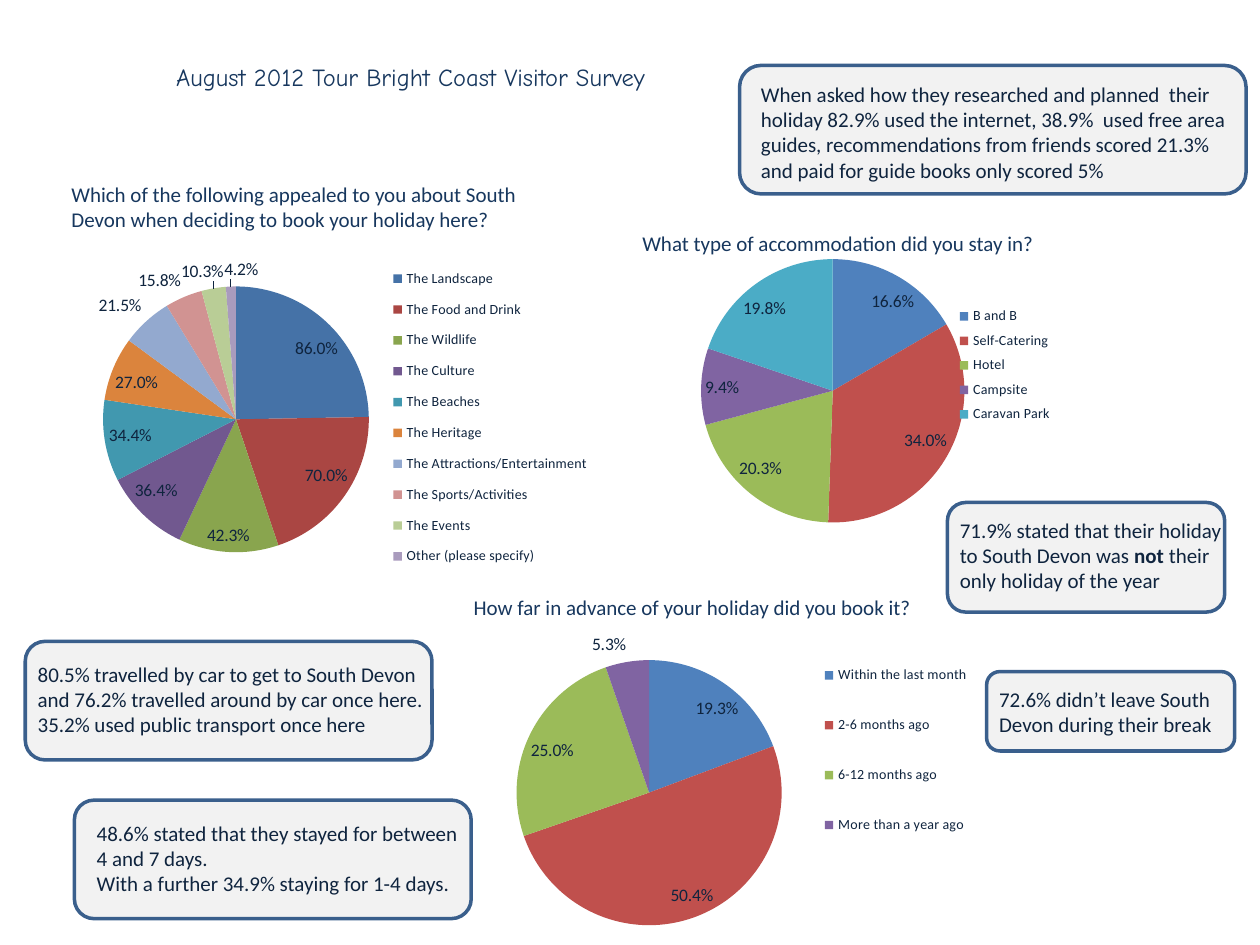
from lxml import etree
from pptx import Presentation
from pptx import util as u
from pptx.chart.data import CategoryChartData
from pptx.dml.color import RGBColor
from pptx.enum import chart as ch, shapes, text
from pptx.oxml.ns import qn

NAVY = RGBColor(0x17, 0x37, 0x5E)
INK = RGBColor(0x0F, 0x24, 0x3E)
PANEL = RGBColor(0xF2, 0xF2, 0xF2)
BORDER = RGBColor(0x3A, 0x5F, 0x8C)
BRIGHT = [RGBColor.from_string(c) for c in
          ("4F81BD", "C0504D", "9BBB59", "8064A2", "4BACC6")]
MUTED = [RGBColor.from_string(c) for c in
         ("4572A7", "AA4643", "89A54E", "71588F", "4198AF",
          "DB843D", "93A9CF", "D19392", "B9CD96", "A99BBD")]

APPEAL = {"The Landscape": 0.86, "The Food and Drink": 0.7, "The Wildlife": 0.423,
          "The Culture": 0.364, "The Beaches": 0.344, "The Heritage": 0.27,
          "The Attractions/Entertainment": 0.215, "The Sports/Activities": 0.158,
          "The Events": 0.103, "Other (please specify)": 0.042}
ADVANCE = {"Within the last month": 0.193, "2-6 months ago": 0.504,
           "6-12 months ago": 0.25, "More than a year ago": 0.053}
LODGING = {"B and B": 0.166, "Self-Catering": 0.34, "Hotel": 0.203,
           "Campsite": 0.094, "Caravan Park": 0.198}

CALLOUTS = [
    ((14.91, 1.32, 10.21, 2.59), (15.09, 1.52, 10.49, 2.31),
     ["When asked how they researched and planned  their holiday 82.9% used the "
      "internet, 38.9%  used free area guides, recommendations from friends "
      "scored 21.3%",
      "and paid for guide books only scored 5%"]),
    ((19.89, 13.54, 5, 1.6), (19.89, 13.72, 5.21, 1.8),
     ["72.6% didn’t leave South Devon during their break"]),
    ((19.1, 10.13, 5.59, 2.21), (19.1, 10.31, 5.79, 1.8),
     ["71.9% stated that their holiday to South Devon was **not** their only "
      "holiday of the year"]),
    ((1.5, 16.13, 8, 2.39), (1.7, 16.41, 8, 1.5),
     ["48.6% stated that they stayed for between 4 and 7 days.",
      "With a further 34.9% staying for 1-4 days."]),
    ((0.51, 12.93, 8.2, 2.39), (0.51, 13.21, 8.41, 1.5),
     ["80.5% travelled by car to get to South Devon and 76.2% travelled around "
      "by car once here.",
      "35.2% used public transport once here"]),
]


def cm(box):
    return [u.Cm(v) for v in box]


def add_text(s, box, *paras, size=12, font="Calibri", color=INK, wrap=True):
    tf = s.shapes.add_textbox(*cm(box)).text_frame
    tf.word_wrap = wrap
    tf.vertical_anchor = text.MSO_ANCHOR.TOP
    for i, para in enumerate(paras):
        p = tf.paragraphs[0] if i == 0 else tf.add_paragraph()
        for j, part in enumerate(para.split("**")):
            r = p.add_run()
            r.text = part
            r.font.size = u.Pt(size)
            r.font.name = font
            r.font.color.rgb = color
            r.font.bold = j % 2 == 1


def add_panel(s, box):
    sp = s.shapes.add_shape(shapes.MSO_SHAPE.FLOWCHART_ALTERNATE_PROCESS, *cm(box))
    sp.shadow.inherit = False
    sp.fill.solid()
    sp.fill.fore_color.rgb = PANEL
    sp.line.color.rgb = BORDER
    sp.line.width = u.Pt(2)


def set_layout(parent, before, box, inner=False):
    for old in parent.findall(qn("c:layout")):
        parent.remove(old)
    layout = etree.Element(qn("c:layout"))
    manual = etree.SubElement(layout, qn("c:manualLayout"))
    items = [("layoutTarget", "inner")] if inner else []
    items += [("xMode", "edge"), ("yMode", "edge"), *zip("xywh", box)]
    for tag, val in items:
        etree.SubElement(manual, qn("c:" + tag)).set("val", str(val))
    before.addprevious(layout)


def set_font(font, size, color):
    font.size = u.Pt(size)
    font.name = "Calibri"
    font.color.rgb = color


def add_pie(s, box, values, colors, plot_box, legend_box):
    data = CategoryChartData(number_format="0.0%")
    data.categories = list(values)
    data.add_series("Series 1", list(values.values()))
    chart = s.shapes.add_chart(ch.XL_CHART_TYPE.PIE, *cm(box), data).chart
    chart.has_title = False
    set_font(chart.font, 10, INK)
    chart.has_legend = True
    legend = chart.legend
    legend.position = ch.XL_LEGEND_POSITION.RIGHT
    legend.include_in_layout = False
    set_font(legend.font, 8, INK)

    plot = chart.plots[0]
    plot.vary_by_categories = True
    for i, color in zip(range(len(values)), colors):
        fill = plot.series[0].points[i].format.fill
        fill.solid()
        fill.fore_color.rgb = color
    plot.has_data_labels = True
    labels = plot.data_labels
    labels.show_value = True
    labels.show_percentage = False
    labels.number_format = "0.0%"
    labels.number_format_is_linked = False
    labels.position = ch.XL_LABEL_POSITION.BEST_FIT
    set_font(labels.font, 10, INK)

    area = chart.element.find(".//" + qn("c:plotArea"))
    set_layout(area, area.find(qn("c:pieChart")), plot_box, inner=True)
    key = chart.element.find(".//" + qn("c:legend"))
    set_layout(key, key.find(qn("c:overlay")), legend_box)


def main():
    prs = Presentation()
    prs.slide_width, prs.slide_height = u.Cm(25.4), u.Cm(19.05)
    s = prs.slides.add_slide(prs.slide_layouts[6])

    for panel_box, _, _ in CALLOUTS:
        add_panel(s, panel_box)

    add_pie(s, (0.71, 4.72, 11.4, 7.47), APPEAL, MUTED,
            (0.12, 0.14, 0.47, 0.72), (0.62, 0.06, 0.37, 0.87))
    add_pie(s, (8.71, 12.45, 11.99, 6.6), ADVANCE, BRIGHT,
            (0.14, 0.13, 0.45, 0.81), (0.65, 0.05, 0.26, 0.71))
    add_pie(s, (12.5, 4.52, 10.21, 6.4), LODGING, BRIGHT,
            (0.16, 0.11, 0.52, 0.83), (0.66, 0.24, 0.2, 0.41))

    add_text(s, (3.3, 1.12, 11.73, 0.86), "August 2012 Tour Bright Coast Visitor Survey",
             size=14, font="Comic Neue", color=NAVY, wrap=False)
    add_text(s, (1.19, 3.53, 9.5, 2.06),
             "Which of the following appealed to you about South Devon when deciding "
             "to book your holiday here?", color=NAVY)
    add_text(s, (9.3, 11.86, 9.4, 0.76),
             "How far in advance of your holiday did you book it?", color=NAVY, wrap=False)
    add_text(s, (12.7, 4.52, 8.48, 1.55),
             "What type of accommodation did you stay in?", color=NAVY, wrap=False)
    for _, text_box, paras in CALLOUTS:
        add_text(s, text_box, *paras)

    prs.save("out.pptx")


if __name__ == "__main__":
    main()
